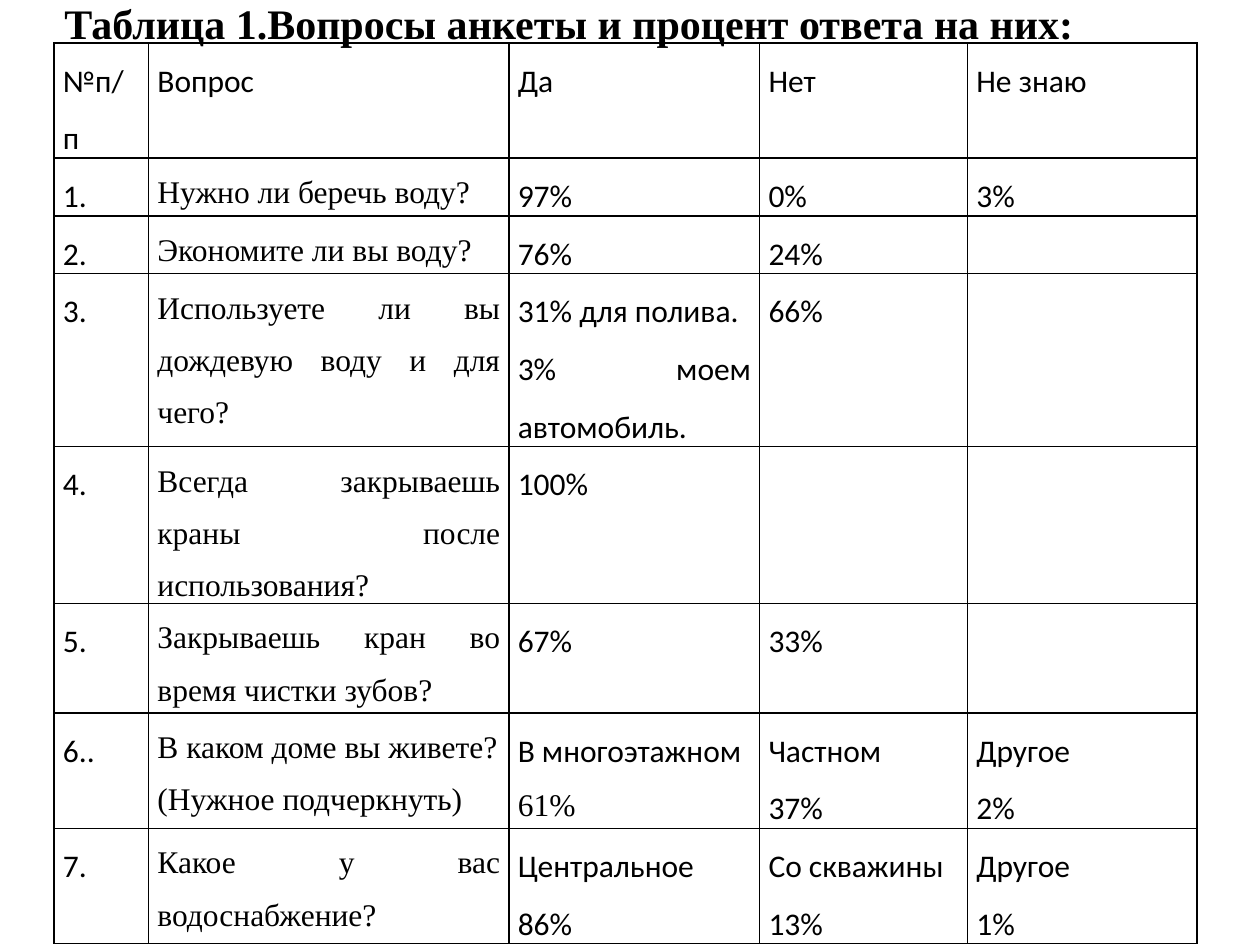
"""Build a slide with a table of water survey questions and answer shares."""
import pptx
import pptx.dml.color
import pptx.enum.text
import pptx.oxml
import pptx.oxml.ns
import pptx.util

Inches = pptx.util.Inches
Pt = pptx.util.Pt

TITLE = "Таблица 1.Вопросы анкеты и процент ответа на них:"
SURVEY = [
    ("№п/п", "Вопрос", "Да", "Нет", "Не знаю"),
    ("1.", "Нужно ли беречь воду?", "97%", "0%", "3%"),
    ("2.", "Экономите ли вы воду?", "76%", "24%", ""),
    ("3.", "Используете ли вы дождевую воду и для чего?",
     "31% для полива.\n3% моем автомобиль.", "66%", ""),
    ("4.", "Всегда закрываешь краны после использования?", "100%", "", ""),
    ("5.", "Закрываешь кран во время чистки зубов?", "67%", "33%", ""),
    ("6..", "В каком доме вы живете?\n(Нужное подчеркнуть)",
     "В многоэтажном\n61%", "Частном\n37%", "Другое\n2%"),
    ("7.", "Какое у вас водоснабжение?",
     "Центральное\n86%", "Со скважины\n13%", "Другое\n1%"),
]
COLUMN_WIDTHS = [0.75, 2.86, 1.99, 1.65, 1.82]
ROW_HEIGHTS = [0.4, 0.44, 0.44, 1.2, 0.71, 0.87, 0.72, 0.87]
COLORS = {"text": "000000", "border": "000000"}
SERIF, SANS = "Times New Roman", "Calibri"
SERIF_ANSWERS = {"61%"}
QUESTION_COLUMN = 1
CELL_FORMAT = {
    "margin_left": Inches(0.07), "margin_right": Inches(0.07),
    "margin_top": 0, "margin_bottom": 0,
}
ANSWER_FORMAT = {"alignment": pptx.enum.text.PP_ALIGN.JUSTIFY, "line_spacing": 1.5}
TITLE_FORMAT = {
    "word_wrap": False,
    "auto_size": pptx.enum.text.MSO_AUTO_SIZE.NONE,
    "vertical_anchor": pptx.enum.text.MSO_ANCHOR.TOP,
}


def apply(target, values):
    for name, value in values.items():
        setattr(target, name, value)


def write(paragraph, text, **font_values):
    run = paragraph.add_run()
    run.text = text
    apply(run.font, font_values)
    run.font.color.rgb = pptx.dml.color.RGBColor.from_string(COLORS["text"])


def add_borders(cell):
    properties = cell._tc.get_or_add_tcPr()
    for position, side in enumerate("LRTB"):
        properties.insert(position, pptx.oxml.parse_xml(
            f'<a:ln{side} {pptx.oxml.ns.nsdecls("a")} w="{Pt(1)}"><a:solidFill>'
            f'<a:srgbClr val="{COLORS["border"]}"/></a:solidFill></a:ln{side}>'))


def fill_cell(cell, text, is_question):
    apply(cell, CELL_FORMAT)
    cell.fill.background()
    add_borders(cell)
    for number, line in enumerate(text.splitlines()):
        frame = cell.text_frame
        paragraph = frame.add_paragraph() if number else frame.paragraphs[0]
        apply(paragraph, ANSWER_FORMAT)
        serif = is_question or line in SERIF_ANSWERS
        write(paragraph, line, size=Pt(18), name=SERIF if serif else SANS)


def add_survey(slide):
    survey = slide.shapes.add_table(
        len(SURVEY), len(COLUMN_WIDTHS), Inches(0.43), Inches(0.34),
        Inches(sum(COLUMN_WIDTHS)), Inches(sum(ROW_HEIGHTS))).table
    apply(survey, {"first_row": False, "horz_banding": False})
    for column, width in zip(survey.columns, COLUMN_WIDTHS):
        column.width = Inches(width)
    for row, height in zip(survey.rows, ROW_HEIGHTS):
        row.height = Inches(height)
    for row_number, answers in enumerate(SURVEY):
        for column_number, text in enumerate(answers):
            is_question = row_number > 0 and column_number == QUESTION_COLUMN
            fill_cell(survey.cell(row_number, column_number), text, is_question)


def add_title(slide):
    title = slide.shapes.add_textbox(
        Inches(0.37), Inches(-0.07), Inches(8.29), Inches(0.81)).text_frame
    apply(title, TITLE_FORMAT)
    heading = title.paragraphs[0]
    heading.alignment = pptx.enum.text.PP_ALIGN.CENTER
    write(heading, TITLE, size=Pt(24), name=SERIF, bold=True)


def main():
    deck = pptx.Presentation()
    apply(deck, {"slide_width": Inches(10), "slide_height": Inches(7.5)})
    slide = deck.slides.add_slide(deck.slide_layouts[6])
    add_survey(slide)
    add_title(slide)
    deck.save("out.pptx")


if __name__ == "__main__":
    main()
